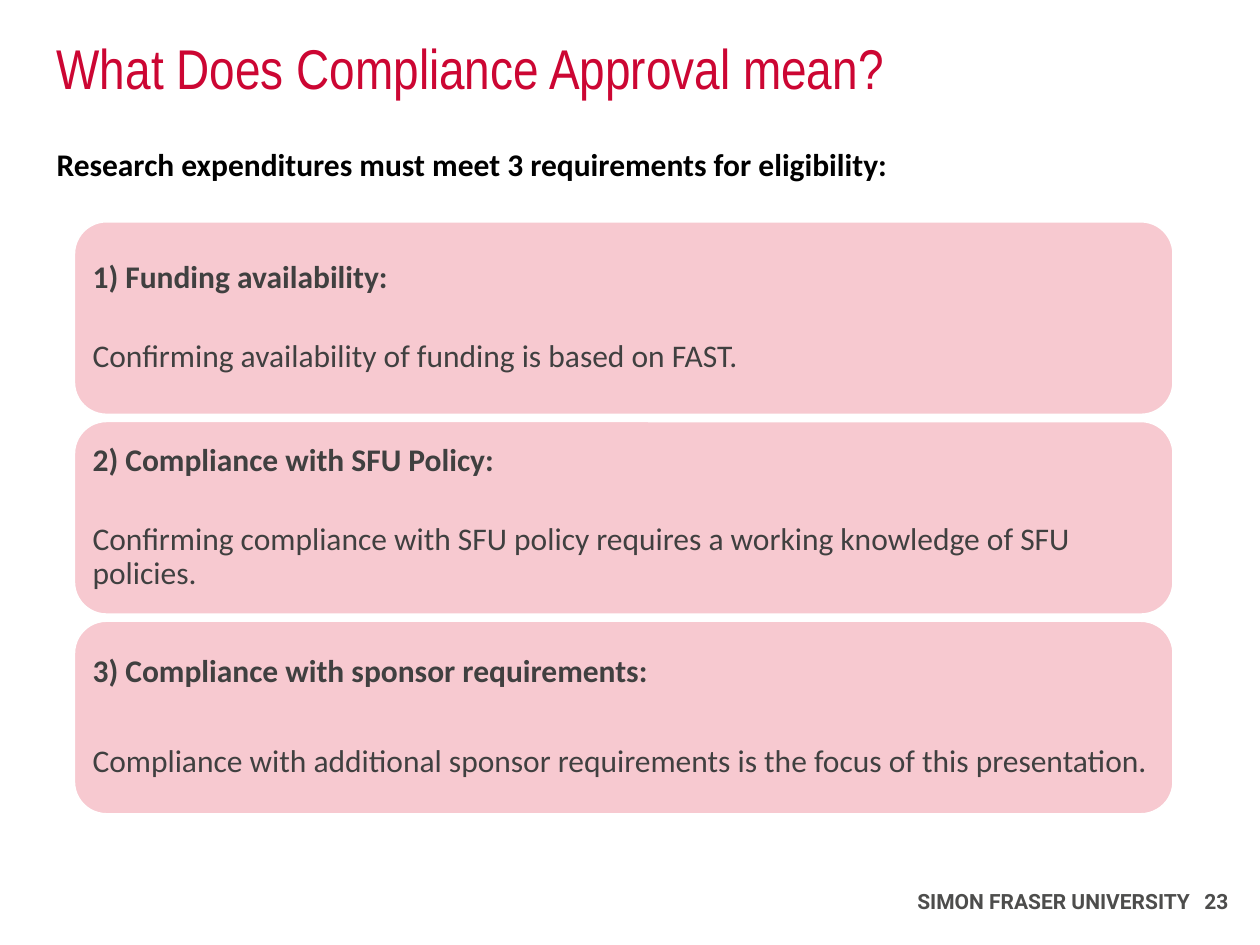
"""Build the compliance approval slide."""
import dataclasses

import lxml.etree
import pptx
import pptx.dml.color
import pptx.enum.shapes
import pptx.enum.text
import pptx.oxml.ns
import pptx.util

ANCHOR = pptx.enum.text.MSO_ANCHOR
ALIGN = pptx.enum.text.PP_ALIGN
COLUMNS, ROWS = 100, 75


@dataclasses.dataclass(frozen=True)
class Theme:
    """Colours and type styles as (font, points, bold, colour)."""
    card: str = "F7C9D0"
    border: str = "FFFFFF"
    title: tuple = ("Arial Narrow", 32, False, "CC0633")
    lead: tuple = ("Calibri", 18, True, "000000")
    heading: tuple = ("Calibri", 18, True, "404040")
    body: tuple = ("Calibri", 18, False, "404040")
    footer: tuple = ("Roboto", 12, True, "4D4D4C")


def apply(target, values):
    """Set each named attribute on the target."""
    for name, value in values.items():
        setattr(target, name, value)


def rgb(colour):
    """Turn a hex string into a colour."""
    return pptx.dml.color.RGBColor.from_string(colour)


class SlideBuilder:
    """Holds the theme and current slide, and places elements on a grid."""

    def __init__(self, presentation, theme):
        """Start a title-only slide."""
        self.theme = theme
        self.column = presentation.slide_width / COLUMNS
        self.row = presentation.slide_height / ROWS
        self.slide = presentation.slides.add_slide(presentation.slide_layouts[5])

    def box(self, left, top, width, height):
        """Convert grid columns and rows to lengths."""
        return (round(left * self.column), round(top * self.row),
                round(width * self.column), round(height * self.row))

    def set_paragraph(self, paragraph, text, style, **values):
        """Fill one paragraph in a type style."""
        paragraph.text = text
        apply(paragraph, {"alignment": ALIGN.LEFT, **values})
        name, size, bold, colour = style
        for run in paragraph.runs:
            apply(run.font, {"name": name, "size": pptx.util.Pt(size), "bold": bold})
            run.font.color.rgb = rgb(colour)

    def title(self, text, *area):
        """Place and format the title placeholder."""
        shape = self.slide.shapes.title
        apply(shape, dict(zip(("left", "top", "width", "height"), self.box(*area))))
        apply(shape.text_frame, {"vertical_anchor": ANCHOR.TOP, "word_wrap": True,
                                 "auto_size": pptx.enum.text.MSO_AUTO_SIZE.NONE})
        self.set_paragraph(shape.text_frame.paragraphs[0], text, self.theme.title,
                           line_spacing=0.9)

    def text(self, text, style, *area, anchor=ANCHOR.TOP):
        """Add a one-paragraph text box and return its frame."""
        frame = self.slide.shapes.add_textbox(*self.box(*area)).text_frame
        apply(frame, {"word_wrap": True, "vertical_anchor": anchor})
        self.set_paragraph(frame.paragraphs[0], text, style)
        return frame

    def footer(self, owner, number, *area, indent, tab):
        """Add the owner and page number, split by a right tab."""
        frame = self.text(f"{owner}\t{number}", self.theme.footer, *area,
                          anchor=ANCHOR.MIDDLE)
        frame.margin_left = round(indent * self.column)
        properties = frame.paragraphs[0]._p.get_or_add_pPr()
        tabs = lxml.etree.SubElement(properties, pptx.oxml.ns.qn("a:tabLst"))
        lxml.etree.SubElement(tabs, pptx.oxml.ns.qn("a:tab"),
                              pos=str(round(tab * self.column)), algn="r")

    def card(self, heading, body, gap, *area):
        """Add a rounded card with a heading and a body paragraph."""
        kind = pptx.enum.shapes.MSO_SHAPE.ROUNDED_RECTANGLE
        shape = self.slide.shapes.add_shape(kind, *self.box(*area))
        shape.shadow.inherit = False
        shape.fill.solid()
        shape.fill.fore_color.rgb = rgb(self.theme.card)
        shape.line.color.rgb = rgb(self.theme.border)
        shape.line.width = pptx.util.Pt(1)
        frame = shape.text_frame
        inset = round(0.7 * self.column)
        apply(frame, {"word_wrap": True, "vertical_anchor": ANCHOR.MIDDLE,
                      "margin_left": inset, "margin_right": inset,
                      "margin_top": inset, "margin_bottom": inset})
        self.set_paragraph(frame.paragraphs[0], heading, self.theme.heading,
                           line_spacing=0.9)
        self.set_paragraph(frame.add_paragraph(), body, self.theme.body,
                           line_spacing=0.9, space_before=pptx.util.Pt(gap))


REQUIREMENTS = [
    ("1) Funding availability:",
     "Confirming availability of funding is based on FAST.", 25.5),
    ("2) Compliance with SFU Policy:",
     "Confirming compliance with SFU policy requires a working knowledge of SFU policies.", 25.5),
    ("3) Compliance with sponsor requirements:",
     "Compliance with additional sponsor requirements is the focus of this presentation.", 32),
]


def main():
    """Build and save the presentation."""
    presentation = pptx.Presentation()
    apply(presentation, {"slide_width": pptx.util.Inches(10),
                         "slide_height": pptx.util.Inches(7.5)})
    theme = Theme()
    builder = SlideBuilder(presentation, theme)
    builder.title("What Does Compliance Approval mean?", 3.5, 2.8, 93.5, 6.6)
    builder.text("Research expenditures must meet 3 requirements for eligibility:",
                 theme.lead, 3.5, 11, 87.9, 4)
    for index, requirement in enumerate(REQUIREMENTS):
        builder.card(*requirement, 5.9, 17.6 + index * 15.85, 87.2, 15.3)
    builder.footer("SIMON FRASER UNIVERSITY", 23, 71.5, 69.5, 27.1, 4, indent=1.3, tab=24.7)
    presentation.save("out.pptx")


if __name__ == "__main__":
    main()
